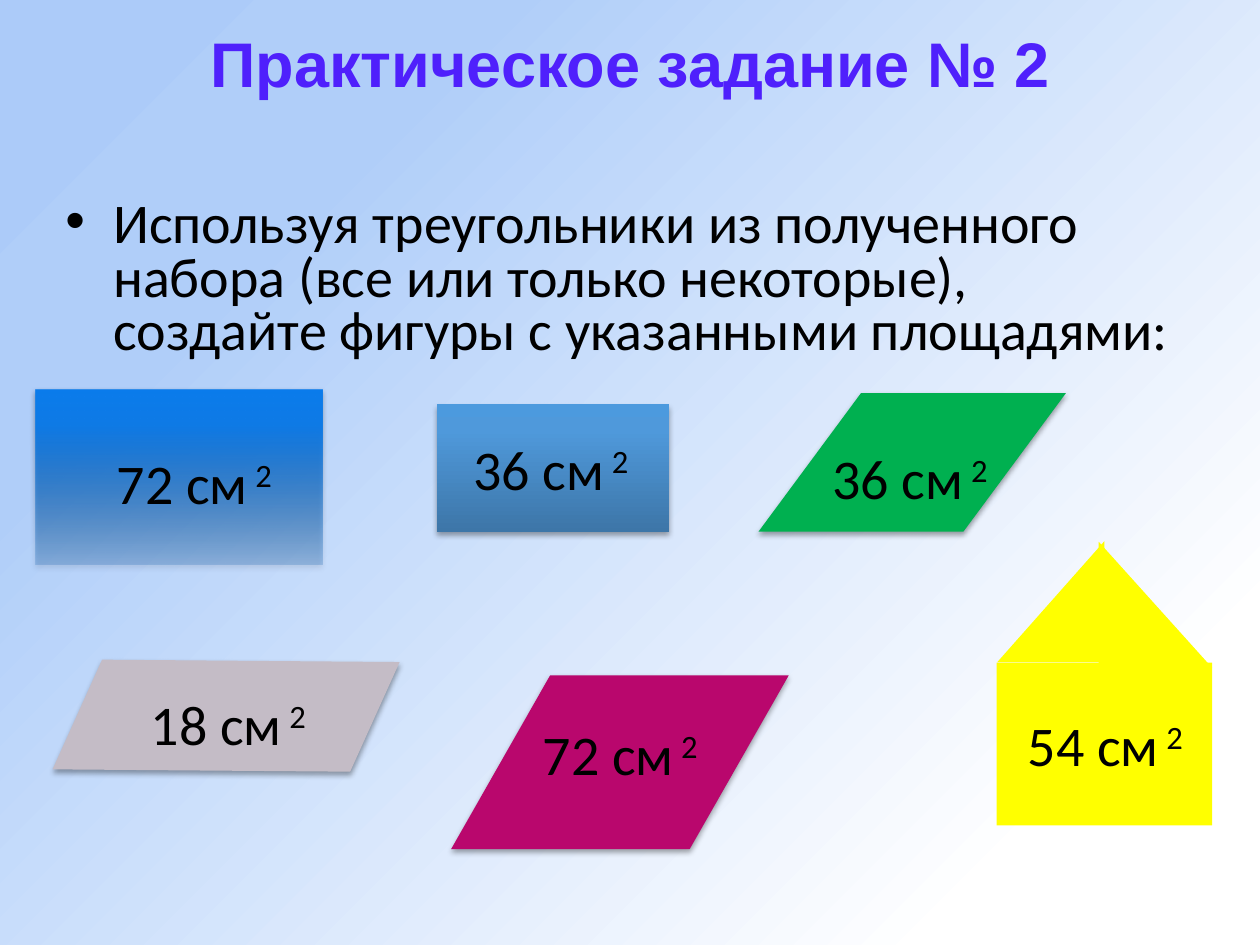
from lxml import etree
from pptx import Presentation
from pptx import util as u
from pptx.dml.color import RGBColor
from pptx.enum import shapes, text
from pptx.oxml import ns, parse_xml

COLORS = {
    "text": "000000", "title": "4F20FC", "sky": "ACCBF9", "sky_edge": "B0CEF9",
    "white": "FFFFFF", "clear_blue": "0B5FB2", "bright_blue": "0F7BE7",
    "top_blue": "0B7CED", "steel_dark": "3D76A8", "steel": "4F99DB",
    "steel_top": "4C9ADE", "grey": "C4BCC6", "magenta": "B9076D",
    "green": "00B050", "yellow": "FFFF00",
}
SHADOW = (
    f'<a:effectLst {ns.nsdecls("a")}>'
    '<a:outerShdw blurRad="40000" dist="23000" dir="5400000" rotWithShape="0">'
    '<a:srgbClr val="000000"><a:alpha val="35000"/></a:srgbClr>'
    '</a:outerShdw></a:effectLst>'
)
SHAPE = shapes.MSO_SHAPE


def set_values(target, values):
    for name, value in values.items():
        setattr(target, name, value)


def set_gradient(fill, properties, stops, angle):
    """Fill with (percent, colour name, opacity percent) stops."""
    fill.gradient()
    fill.gradient_angle = angle
    stop_list = properties.find(".//" + ns.qn("a:gsLst"))
    for old_stop in list(stop_list):
        stop_list.remove(old_stop)
    for position, color, opacity in stops:
        stop = etree.SubElement(stop_list, ns.qn("a:gs"), pos=str(position * 1000))
        rgb = etree.SubElement(stop, ns.qn("a:srgbClr"), val=COLORS[color])
        if opacity < 100:
            etree.SubElement(rgb, ns.qn("a:alpha"), val=str(opacity * 1000))


class SlideBuilder:
    def __init__(self, slide):
        self.slide = slide
        self.body_font = {"name": "Calibri", "size": u.Pt(32)}
        self.title_font = {"name": "Arial", "size": u.Pt(36), "bold": True}

    def background(self, stops, angle):
        background = self.slide.background
        set_gradient(background.fill, self.slide.element, stops, angle)

    def figure(self, kind, box, fill, adjustment=None, rotation=0,
               flipped=False, shadow=True):
        shape = self.slide.shapes.add_shape(kind, *map(u.Inches, box))
        shape.rotation = rotation
        if adjustment is not None:
            shape.adjustments[0] = adjustment
        properties = shape.element.spPr
        if isinstance(fill, str):
            shape.fill.solid()
            shape.fill.fore_color.rgb = RGBColor.from_string(COLORS[fill])
        else:
            set_gradient(shape.fill, properties, fill, 90)
        shape.line.fill.background()
        if flipped:
            properties.xfrm.set("flipV", "1")
        if shadow:
            properties.append(parse_xml(SHADOW))
        else:
            shape.shadow.inherit = False

    def text_box(self, box, frame_values):
        frame = self.slide.shapes.add_textbox(*map(u.Inches, box)).text_frame
        set_values(frame, frame_values)
        return frame.paragraphs[0]

    def run(self, paragraph, words, font_values, color="text"):
        run = paragraph.add_run()
        run.text = words
        set_values(run.font, font_values)
        run.font.color.rgb = RGBColor.from_string(COLORS[color])
        return run

    def title(self, box, words):
        paragraph = self.text_box(box, {
            "word_wrap": True, "vertical_anchor": text.MSO_ANCHOR.MIDDLE})
        paragraph.alignment = text.PP_ALIGN.CENTER
        self.run(paragraph, words, self.title_font, "title")

    def bullet(self, box, words):
        paragraph = self.text_box(box, {"word_wrap": True})
        set_values(paragraph, {"line_spacing": 0.8, "space_before": u.Pt(6.4)})
        self.run(paragraph, words, self.body_font)
        properties = paragraph._p.get_or_add_pPr()
        indent = u.Inches(0.38)
        properties.set("marL", str(indent))
        properties.set("indent", str(-indent))
        etree.SubElement(properties, ns.qn("a:buFont"), typeface="Arial")
        etree.SubElement(properties, ns.qn("a:buChar"), char="•")

    def area_label(self, left, top, area):
        paragraph = self.text_box((left, top, 1.47, 0.64), {
            "word_wrap": False, "auto_size": text.MSO_AUTO_SIZE.SHAPE_TO_FIT_TEXT})
        self.run(paragraph, f"{area} см", self.body_font)
        power = self.run(paragraph, " 2", self.body_font)
        power._r.get_or_add_rPr().set("baseline", "30000")


def main():
    presentation = Presentation()
    set_values(presentation, {"slide_width": u.Inches(10),
                              "slide_height": u.Inches(7.5)})
    builder = SlideBuilder(presentation.slides.add_slide(presentation.slide_layouts[6]))
    builder.background([(0, "sky", 100), (23, "sky_edge", 100),
                        (85, "white", 100), (100, "white", 100)], 315)
    builder.bullet((0.42, 1.54, 9.1, 1.45),
                   "Используя треугольники из полученного набора (все или только "
                   "некоторые), создайте фигуры с указанными площадями:")
    builder.title((0.42, 0.13, 9.17, 0.73), "Практическое задание № 2")

    builder.figure(SHAPE.RECTANGLE, (0.28, 3.09, 2.28, 1.39), [
        (0, "clear_blue", 22), (80, "bright_blue", 100), (100, "top_blue", 100)])
    builder.figure(SHAPE.RECTANGLE, (3.47, 3.21, 1.84, 1.01), [
        (0, "steel_dark", 100), (80, "steel", 100), (100, "steel_top", 100)])
    builder.figure(SHAPE.PARALLELOGRAM, (0.84, 4.6, 1.91, 2.16), "grey",
                   adjustment=0.5, rotation=114.3, flipped=True)
    builder.figure(SHAPE.PARALLELOGRAM, (3.58, 5.36, 2.68, 1.38), "magenta", 0.57)
    builder.figure(SHAPE.PARALLELOGRAM, (6.02, 3.12, 2.44, 1.1), "green", 0.74)

    house_parts = [
        (SHAPE.RECTANGLE, (7.91, 5.26, 1.71, 1.29), 0),
        (SHAPE.RIGHT_TRIANGLE, (7.86, 4.35, 0.96, 0.85), 270),
        (SHAPE.RIGHT_TRIANGLE, (8.72, 4.3, 0.9, 1), 0),
    ]
    for kind, box, rotation in house_parts:
        builder.figure(kind, box, "yellow", rotation=rotation, shadow=False)

    for left, top, area in [(0.83, 3.51, 72), (3.66, 3.4, 36), (6.51, 3.47, 36),
                            (1.1, 5.42, 18), (4.21, 5.66, 72), (8.06, 5.59, 54)]:
        builder.area_label(left, top, area)
    presentation.save("out.pptx")


if __name__ == "__main__":
    main()
